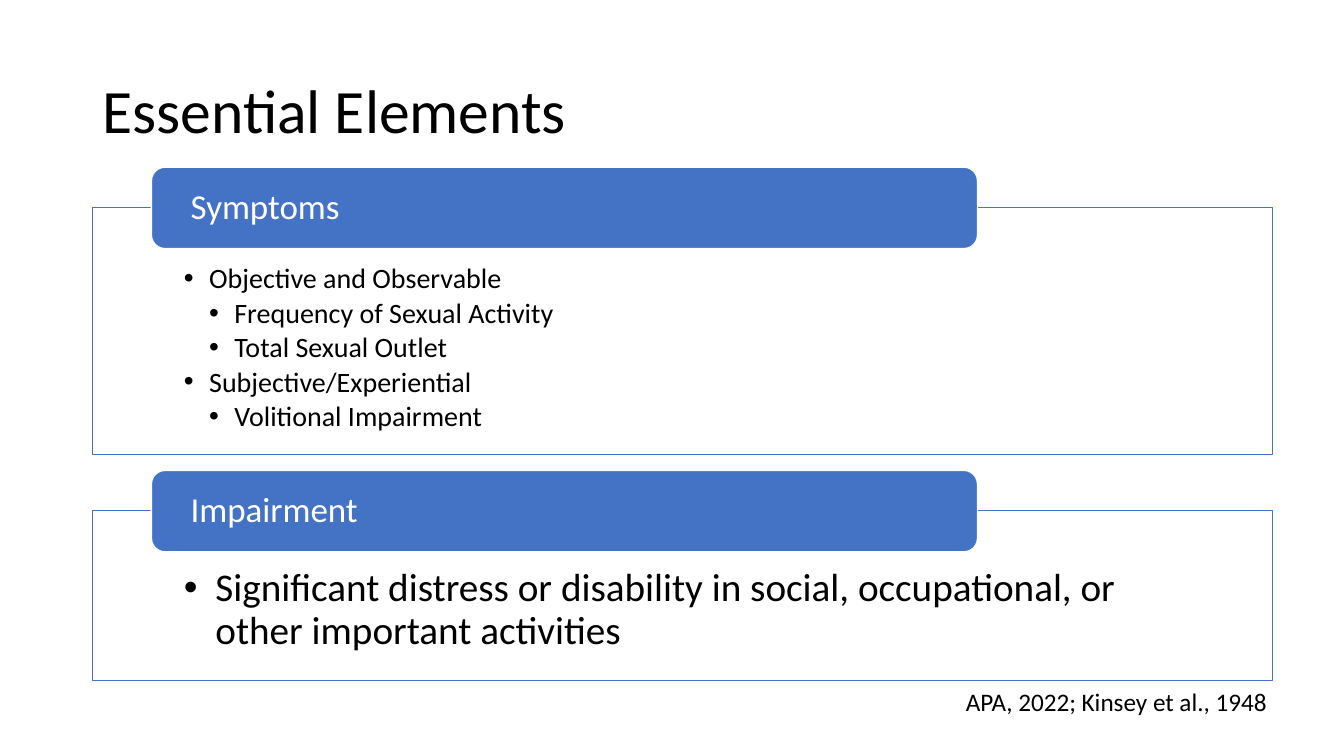
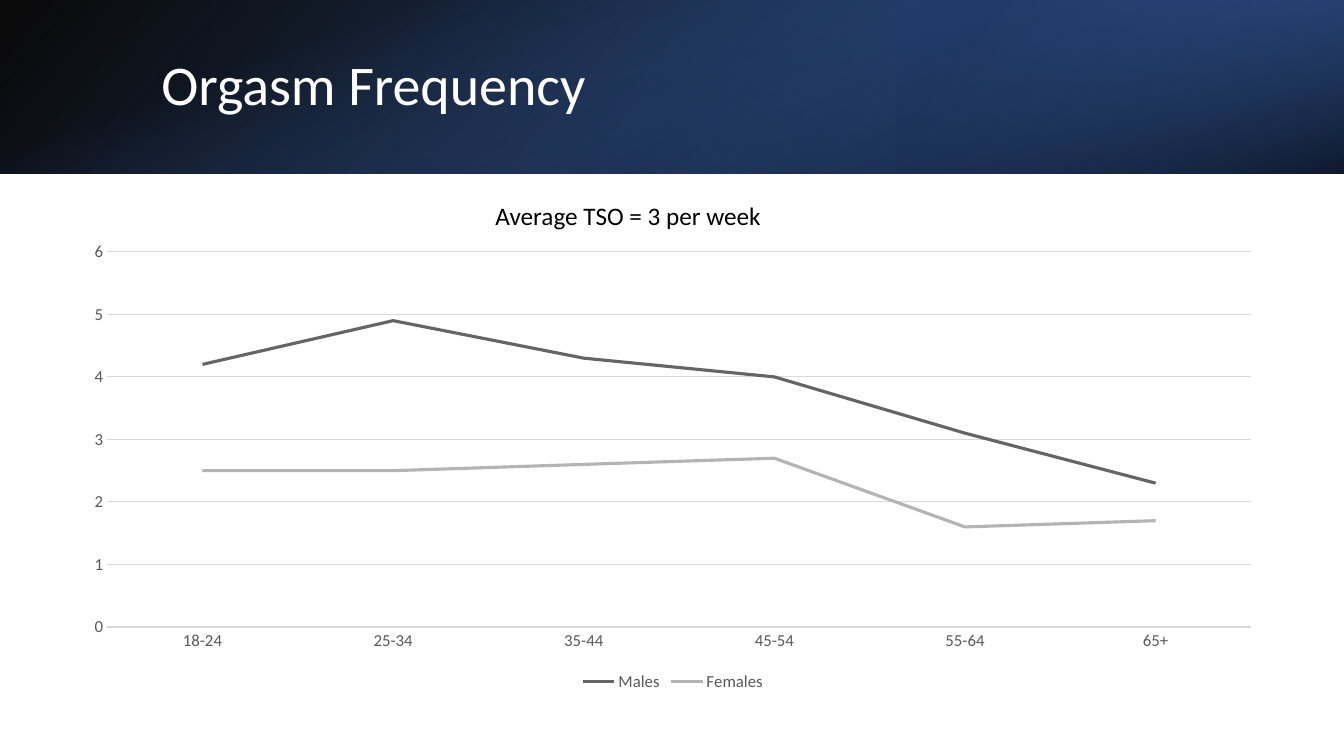
from pptx import Presentation
from pptx.chart.data import CategoryChartData
from pptx.dml.color import RGBColor
from pptx.enum.chart import XL_CHART_TYPE, XL_LEGEND_POSITION, XL_TICK_MARK
from pptx.enum.shapes import MSO_SHAPE
from pptx.enum.text import MSO_ANCHOR, MSO_AUTO_SIZE, PP_ALIGN
from pptx.oxml import parse_xml
from pptx.oxml.ns import nsdecls, qn
from pptx.util import Inches, Pt

RECT, ROUND = MSO_SHAPE.RECTANGLE, MSO_SHAPE.ROUNDED_RECTANGLE
TOP, MIDDLE = MSO_ANCHOR.TOP, MSO_ANCHOR.MIDDLE
LEFT, FIXED = PP_ALIGN.LEFT, MSO_AUTO_SIZE.NONE
LINE, BOTTOM = XL_CHART_TYPE.LINE, XL_LEGEND_POSITION.BOTTOM
NO_TICK = XL_TICK_MARK.NONE

# Shared look and a grid of 160 columns by 90 rows
FONT = "Calibri"
BLACK, WHITE, BLUE = "000000", "FFFFFF", "4472C4"
GREY, RULE = "595959", "D9D9D9"
COLS, ROWS = 160, 90
CELL = Inches(13.333) / COLS
TWO_LISTS, TITLE_ONLY = 3, 5


def grid(n):
    return round(n * CELL)


def rgb(color):
    return RGBColor.from_string(color)


def apply(obj, **fmt):
    for name, value in fmt.items():
        setattr(obj, name, value)


def place(shape, box):
    apply(shape, **dict(zip(("left", "top", "width", "height"), map(grid, box))))


def ink(font, size, color):
    apply(font, name=FONT, size=Pt(size))
    font.color.rgb = rgb(color)


def edge(line, color, width):
    line.color.rgb = rgb(color)
    line.width = Pt(width)


def write(para, text, size, color, **fmt):
    para.text = text
    apply(para, alignment=LEFT, space_before=Pt(0), **fmt)
    ink(para.font, size, color)


def frame(shape, anchor, **margins):
    apply(shape.text_frame, word_wrap=True, auto_size=FIXED,
          vertical_anchor=anchor, **margins)
    return shape.text_frame


def block(slide, kind, box):
    shape = slide.shapes.add_shape(kind, *map(grid, box))
    shape.shadow.inherit = False
    return shape


def title(slide, text, box, size, color):
    head = slide.shapes.title
    place(head, box)
    write(frame(head, MIDDLE).paragraphs[0], text, size, color, line_spacing=0.9)


def note(slide, text, box, wrap=True):
    label = slide.shapes.add_textbox(*map(grid, box))
    label.text_frame.word_wrap = wrap
    write(label.text_frame.paragraphs[0], text, 18, BLACK)


# Outlined list with a heading tab over its top edge
def panel(slide, body, box, head, items, size, hang):
    x, y, w, h = box
    place(body, box)
    body.fill.solid()
    body.fill.fore_color.rgb = rgb(WHITE)
    edge(body.line, BLUE, 1)
    text = frame(body, TOP, margin_left=grid(10.9), margin_right=grid(10.9),
                 margin_top=grid(6.8), margin_bottom=grid(2))
    for i, (level, item) in enumerate(items):
        para = text.add_paragraph() if i else text.paragraphs[0]
        props = para._p.get_or_add_pPr()
        props.set("marL", str(grid(hang * (level + 1))))
        props.set("indent", str(-grid(hang)))
        props.append(parse_xml(f'<a:buChar {nsdecls("a")} char="•"/>'))
        write(para, item, size, BLACK, level=level, line_spacing=0.9,
              space_after=Pt(size * 0.15))

    tab = block(slide, ROUND, (x + 0.05 * w, y - 4.8, 0.7 * w, 9.7))
    tab.fill.solid()
    tab.fill.fore_color.rgb = rgb(BLUE)
    edge(tab.line, WHITE, 1)
    text = frame(tab, MIDDLE, margin_left=grid(4.2), margin_right=grid(4.2))
    write(text.paragraphs[0], head, 25, WHITE, line_spacing=0.9)


# Gradient layer set behind the title; stops are (position, colour, opacity)
def layer(slide, box, stops, angle, turn=0, flip=False):
    shape = block(slide, RECT, box)
    shape.rotation = turn
    shape.line.fill.background()
    props = shape.element.spPr
    if flip:
        props.get_or_add_xfrm().set("flipH", "1")
    marks = "".join(
        f'<a:gs pos="{pos * 1000}"><a:srgbClr val="{color}">'
        f'<a:alpha val="{alpha * 1000}"/></a:srgbClr></a:gs>'
        for pos, color, alpha in stops)
    props.find(qn("a:prstGeom")).addnext(parse_xml(
        f'<a:gradFill {nsdecls("a")} rotWithShape="1"><a:gsLst>{marks}</a:gsLst>'
        f'<a:lin ang="{angle * 60000}" scaled="0"/></a:gradFill>'))
    slide.shapes.title.element.addprevious(shape.element)


def band(slide, box):
    x, y, w, h = box
    layer(slide, box, [(0, BLACK, 96), (100, "2F5597", 100)], 140, flip=True)
    layer(slide, (x + w * 2 / 3, y, w / 3, h),
          [(19, "203864", 68), (100, BLUE, 79)], 320, turn=180, flip=True)
    layer(slide, (x + (w - h) / 2, y + (h - w) / 2, h, w),
          [(23, BLUE, 0), (99, BLACK, 74)], 340, turn=90)


# Line chart
def plot(slide, box, cats, series):
    data = CategoryChartData()
    data.categories = cats
    for name, values, _ in series:
        data.add_series(name, values)
    chart = slide.shapes.add_chart(LINE, *map(grid, box), data).chart
    apply(chart, has_title=False, has_legend=True)
    ink(chart.font, 10, BLACK)
    apply(chart.legend, position=BOTTOM, include_in_layout=False)
    ink(chart.legend.font, 12, GREY)
    chart.plots[0].vary_by_categories = False

    across, up = chart.category_axis, chart.value_axis
    for axis in (across, up):
        apply(axis, major_tick_mark=NO_TICK, minor_tick_mark=NO_TICK)
        ink(axis.tick_labels.font, 12, GREY)
    edge(across.format.line, RULE, 0.75)
    apply(up, minimum_scale=0, maximum_scale=6, major_unit=1)
    up.format.line.fill.background()
    edge(up.major_gridlines.format.line, RULE, 0.75)

    for line, (_, _, color) in zip(chart.plots[0].series, series):
        line.smooth = False
        edge(line.format.line, color, 2.25)


def elements(deck):
    slide = deck.slides.add_slide(deck.slide_layouts[TWO_LISTS])
    title(slide, "Essential Elements", (11, 4.8, 138, 17.4), 44, BLACK)
    first, second = list(slide.placeholders)[1:]
    panel(slide, first, (11, 24.7, 140.5, 29.4), "Symptoms", [
        (0, "Objective and Observable"),
        (1, "Frequency of Sexual Activity"),
        (1, "Total Sexual Outlet"),
        (0, "Subjective/Experiential"),
        (1, "Volitional Impairment"),
    ], 20, 3)
    panel(slide, second, (11, 60.8, 140.5, 20.2), "Impairment", [
        (0, "Significant distress or disability in social, occupational, "
            "or other important activities"),
    ], 28, 3.75)
    note(slide, "APA, 2022; Kinsey et al., 1948", (113.8, 81.1, 46.2, 4.8))


def rates(deck):
    slide = deck.slides.add_slide(deck.slide_layouts[TITLE_ONLY])
    band(slide, (0, 0, COLS, 20.7))
    title(slide, "Orgasm Frequency", (18, 4.6, 131.8, 11.5), 40, WHITE)
    plot(slide, (8.4, 27.7, 143.4, 55.1),
         ["18-24", "25-34", "35-44", "45-54", "55-64", "65+"],
         [("Males", (4.2, 4.9, 4.3, 4, 3.1, 2.3), "656565"),
          ("Females", (2.5, 2.5, 2.6, 2.7, 1.6, 1.7), "B4B4B4")])
    note(slide, "Average TSO = 3 per week", (57.8, 23.2, 34.4, 4.8), wrap=False)


def main():
    deck = Presentation()
    apply(deck, slide_width=grid(COLS), slide_height=grid(ROWS))
    elements(deck)
    rates(deck)
    deck.save("out.pptx")


if __name__ == "__main__":
    main()
